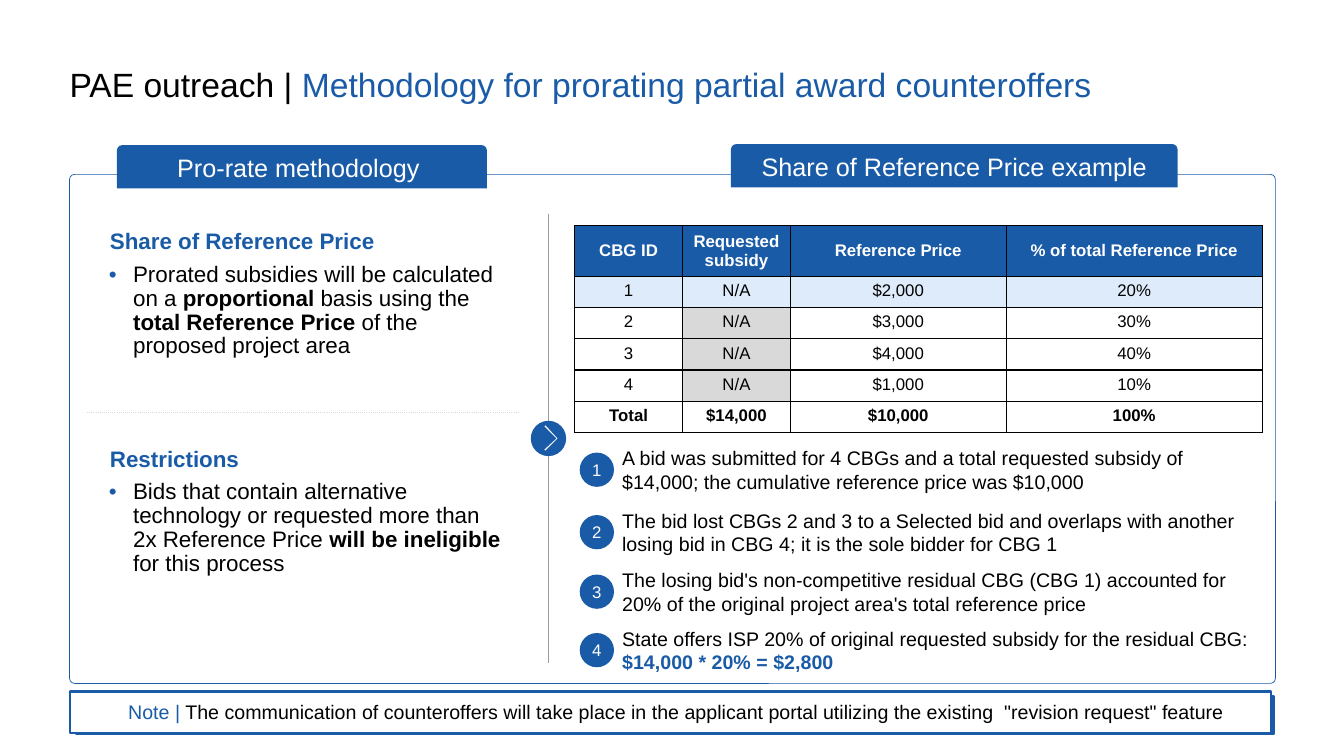
"""Builds the slide on prorating partial award counteroffers."""
from dataclasses import dataclass

from lxml.etree import SubElement
from pptx import Presentation
from pptx.dml.color import RGBColor
from pptx.enum.shapes import MSO_CONNECTOR, MSO_SHAPE
from pptx.enum.text import MSO_ANCHOR, PP_ALIGN
from pptx.oxml.ns import qn
from pptx.util import Emu, Pt

EMU_PER_PX = 9144


@dataclass(frozen=True)
class Theme:
    font: str = "Arial"
    blue: str = "1A5BA7"
    ink: str = "020101"
    black: str = "000000"
    white: str = "FFFFFF"
    pale: str = "DEEBFA"
    grey: str = "D9D9D9"
    rule: str = "9A9A9A"
    title: int = 24
    tab: int = 18
    body: int = 16
    step: int = 14
    small: int = 12


THEME = Theme()

PRICES = [
    ["CBG ID", "Requested subsidy", "Reference Price", "% of total Reference Price"],
    ["1", "N/A", "$2,000", "20%"],
    ["2", "N/A", "$3,000", "30%"],
    ["3", "N/A", "$4,000", "40%"],
    ["4", "N/A", "$1,000", "10%"],
    ["Total", "$14,000", "$10,000", "100%"],
]
METHODS = [
    ("Share of Reference Price", 5, [
        ("Prorated subsidies will be calculated on a ",),
        ("proportional", True),
        (" basis using the ",),
        ("total Reference Price ", True),
        ("of the proposed project area",),
    ]),
    ("Restrictions", 36, [
        ("Bids that contain alternative technology or requested more than 2x Reference Price ",),
        ("will be ineligible", True),
        (" for this process",),
    ]),
]
STEPS = [
    (443, [("A bid was submitted for 4 CBGs and a total requested subsidy of $14,000; "
            "the cumulative reference price was $10,000",)]),
    (505, [("The bid lost CBGs 2 and 3 to a Selected bid and overlaps with another "
            "losing bid in CBG 4; it is the sole bidder for CBG 1",)]),
    (564, [("The losing bid's non-competitive residual CBG (CBG 1) accounted for "
            "20% of the original project area's total reference price",)]),
    (622, [("State offers ISP 20% of original requested subsidy for the residual CBG: ",),
           ("$14,000 * 20% = $2,800", True, THEME.blue)]),
]


def px(*lengths):
    """Turn pixel lengths into EMU."""
    return [Emu(length * EMU_PER_PX) for length in lengths]


def rgb(color):
    """Turn a hex string into a colour."""
    return RGBColor.from_string(color)


def write(paragraph, spans, size, color, bold=False, align=PP_ALIGN.LEFT):
    """Fill a paragraph with spans of (text, bold, colour)."""
    paragraph.alignment = align
    font = paragraph.font
    font.name, font.size, font.bold = THEME.font, Pt(size), bold
    font.color.rgb = rgb(color)
    for text, *style in spans:
        span = paragraph.add_run()
        span.text = text
        if style:
            span.font.bold = style[0]
        if len(style) > 1:
            span.font.color.rgb = rgb(style[1])


def indent(paragraph, left, hanging=0, bullet=False):
    """Set the indents of a paragraph and, if asked, its blue bullet."""
    properties = paragraph._p.get_or_add_pPr()
    properties.set("marL", str(left * EMU_PER_PX))
    properties.set("indent", str(-hanging * EMU_PER_PX))
    if bullet:
        color = SubElement(properties, qn("a:buClr"))
        SubElement(color, qn("a:srgbClr"), val=THEME.blue)
        SubElement(properties, qn("a:buFont"), typeface=THEME.font)
        SubElement(properties, qn("a:buChar"), char="•")


def paint(shape, fill=None, line=None, width=1.0):
    """Give a shape its fill and line, without a shadow."""
    shape.shadow.inherit = False
    if fill:
        shape.fill.solid()
        shape.fill.fore_color.rgb = rgb(fill)
    else:
        shape.fill.background()
    if line:
        shape.line.color.rgb = rgb(line)
        shape.line.width = Pt(width)
    else:
        shape.line.fill.background()


def add_box(page, kind, place, fill=None, line=None, width=1.0):
    """Add a preset shape with middle-anchored wrapping text."""
    box = page.shapes.add_shape(kind, *px(*place))
    paint(box, fill, line, width)
    box.text_frame.word_wrap = True
    box.text_frame.vertical_anchor = MSO_ANCHOR.MIDDLE
    return box


def add_border(cell, side, color, dash="solid"):
    """Draw one border of a table cell."""
    line = SubElement(cell._tc.get_or_add_tcPr(), qn(f"a:ln{side}"), w=str(Pt(1)))
    SubElement(SubElement(line, qn("a:solidFill")), qn("a:srgbClr"), val=color)
    SubElement(line, qn("a:prstDash"), val=dash)


def add_grid(page, left, top, widths, heights):
    """Add an unbanded table with the given column widths and row heights."""
    place = px(left, top, sum(widths), sum(heights))
    table = page.shapes.add_table(len(heights), len(widths), *place).table
    table.first_row = table.horz_banding = False
    for column, width in zip(table.columns, px(*widths)):
        column.width = width
    for row, height in zip(table.rows, px(*heights)):
        row.height = height
    return table


def add_title(page):
    """Add the two-colour title."""
    frame = page.shapes.add_textbox(*px(69, 68, 1196, 36)).text_frame
    frame.word_wrap = True
    frame.margin_left = frame.margin_right = frame.margin_top = frame.margin_bottom = 0
    write(frame.paragraphs[0], [("PAE outreach | ",),
          ("Methodology for prorating partial award counteroffers", False, THEME.blue)],
          THEME.title, THEME.ink)
    frame.paragraphs[0].line_spacing = 0.9


def add_divider(page):
    """Add the vertical divider with its round arrow."""
    line = page.shapes.add_connector(MSO_CONNECTOR.STRAIGHT, *px(544, 212, 544, 658))
    line.line.color.rgb = rgb(THEME.rule)
    line.line.width = Pt(0.75)
    SubElement(line._element.spPr, qn("a:effectLst"))
    add_box(page, MSO_SHAPE.OVAL, (527, 418, 34, 34), THEME.blue, THEME.blue, 0.75)
    arrow = page.shapes.build_freeform(541, 447, scale=EMU_PER_PX)
    arrow.add_line_segments([(540, 446), (552, 435), (540, 423), (541, 422), (553, 435)])
    paint(arrow.convert_to_shape(), THEME.white)


def add_tab(page, place, text):
    """Add a blue heading tab."""
    tab = add_box(page, MSO_SHAPE.ROUND_2_SAME_RECTANGLE, place, THEME.blue)
    tab.adjustments[0] = 0.12
    write(tab.text_frame.paragraphs[0], [(text,)], THEME.tab, THEME.white,
          align=PP_ALIGN.CENTER)


def add_prices(page):
    """Add the reference price table."""
    table = add_grid(page, 570, 224, [107, 107, 214, 254], [48] + [31] * 5)
    last = len(PRICES) - 1
    for row, texts in enumerate(PRICES):
        for column, text in enumerate(texts):
            cell = table.cell(row, column)
            for side in "LRTB":
                add_border(cell, side, THEME.ink)
            plain = THEME.grey if column == 1 and row < last else THEME.white
            cell.fill.solid()
            cell.fill.fore_color.rgb = rgb({0: THEME.blue, 1: THEME.pale}.get(row, plain))
            cell.vertical_anchor = MSO_ANCHOR.TOP if row else MSO_ANCHOR.MIDDLE
            write(cell.text_frame.paragraphs[0], [(text,)], THEME.small,
                  THEME.ink if row else THEME.white, row in (0, last), PP_ALIGN.CENTER)


def add_methods(page):
    """Add the two methodology notes with a dotted rule between them."""
    table = add_grid(page, 87, 224, [426], [185, 253])
    for row, (heading, margin, spans) in enumerate(METHODS):
        cell = table.cell(row, 0)
        add_border(cell, "T" if row else "B", THEME.grey, "sysDot")
        cell.fill.background()
        cell.margin_top = px(margin)[0]
        head, detail = cell.text_frame.paragraphs[0], cell.text_frame.add_paragraph()
        indent(head, 12)
        indent(detail, 35, 24, bullet=True)
        for paragraph in (head, detail):
            paragraph.line_spacing = 0.96
            paragraph.space_after = Pt(6)
        write(head, [(heading,)], THEME.body, THEME.blue, True)
        write(detail, spans, THEME.body, THEME.ink)


def add_step(page, number, top, spans):
    """Add one numbered step."""
    box = add_box(page, MSO_SHAPE.ROUNDED_RECTANGLE, (605, top, 646, 46),
                  line=THEME.white, width=1.5)
    write(box.text_frame.paragraphs[0], spans, THEME.step, THEME.black)
    badge = add_box(page, MSO_SHAPE.OVAL, (575, top + 6, 34, 34), THEME.blue)
    frame = badge.text_frame
    frame.margin_left = frame.margin_right = frame.margin_top = frame.margin_bottom = 0
    write(frame.paragraphs[0], [(str(number),)], THEME.small, THEME.white,
          align=PP_ALIGN.CENTER)


def add_note(page):
    """Add the note bar with its blue backing."""
    add_box(page, MSO_SHAPE.RECTANGLE, (75, 691, 1189, 37), THEME.blue, THEME.blue, 1.5)
    bar = add_box(page, MSO_SHAPE.RECTANGLE, (69, 686, 1192, 41), THEME.white, THEME.blue, 1.5)
    paragraph = bar.text_frame.paragraphs[0]
    indent(paragraph, 12)
    write(paragraph, [("Note |", False, THEME.blue),
          (" The communication of counteroffers will take place in the applicant portal "
           "utilizing the existing  \"revision request\" feature",)],
          THEME.step, THEME.ink, align=PP_ALIGN.CENTER)


def main():
    """Build and save the deck."""
    deck = Presentation()
    deck.slide_width, deck.slide_height = px(1333, 750)
    page = deck.slides.add_slide(deck.slide_layouts[6])
    add_title(page)
    add_divider(page)
    panel = add_box(page, MSO_SHAPE.ROUNDED_RECTANGLE, (69, 173, 1196, 505),
                    line=THEME.blue, width=0.5)
    panel.adjustments[0] = 0.01
    add_tab(page, (116, 144, 367, 43), "Pro-rate methodology ")
    add_tab(page, (725, 143, 443, 43), "Share of Reference Price example")
    add_prices(page)
    add_methods(page)
    for number, (top, spans) in enumerate(STEPS, 1):
        add_step(page, number, top, spans)
    add_note(page)
    deck.save("out.pptx")


if __name__ == "__main__":
    main()
